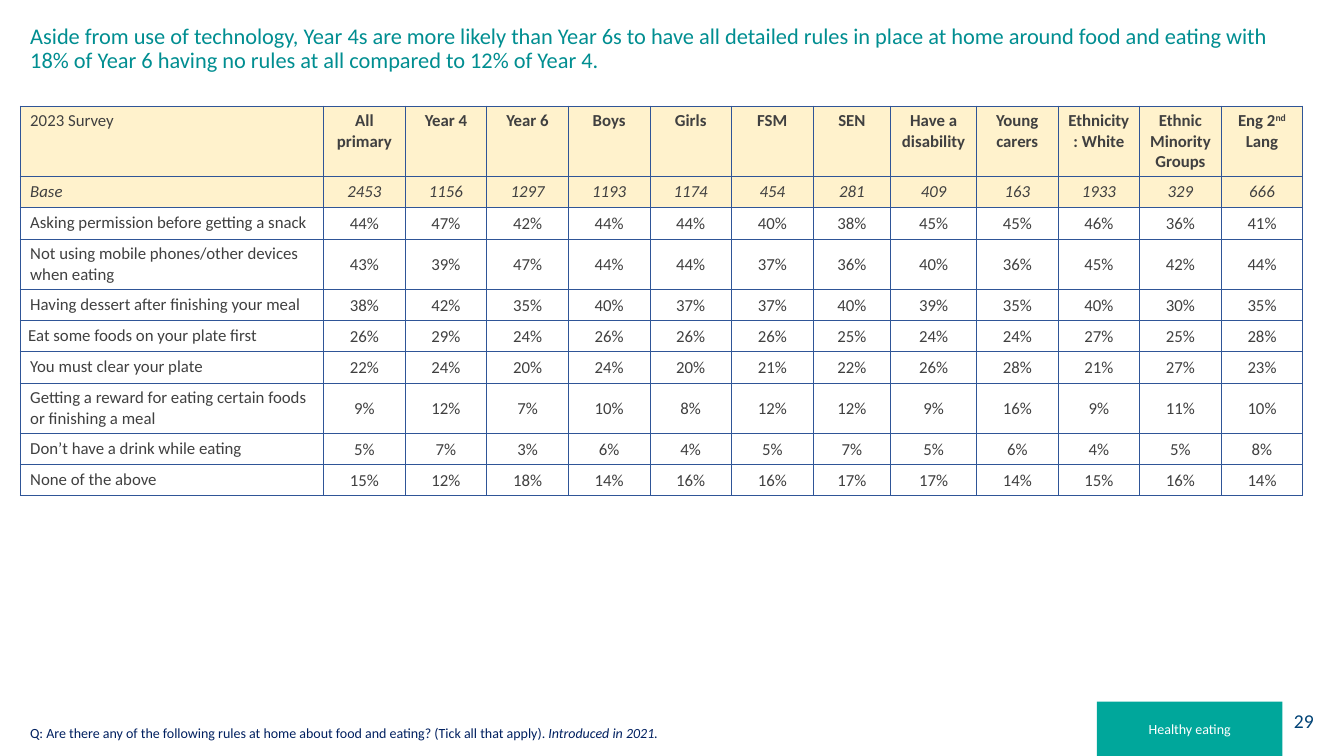
from dataclasses import dataclass

from lxml.etree import SubElement
from pptx import Presentation
from pptx.dml.color import RGBColor
from pptx.enum.shapes import MSO_SHAPE
from pptx.enum.text import MSO_ANCHOR, MSO_AUTO_SIZE, PP_ALIGN
from pptx.oxml.ns import qn
from pptx.util import Inches, Pt


@dataclass(frozen=True)
class Theme:
    font: str = "Calibri"
    heading: str = "008E91"
    body: str = "404040"
    question: str = "002060"
    number: str = "004376"
    border: str = "2F5597"
    header_fill: str = "FFF2CC"
    tag_fill: str = "00A79B"
    white: str = "FFFFFF"
    heading_size: int = 16
    number_size: int = 14
    table_size: int = 12
    small_size: int = 10
    border_width: float = 0.5


THEME = Theme()
WIDTH, HEIGHT = Inches(13.33), Inches(7.5)

TITLE = ("Aside from use of technology, Year 4s are more likely than Year 6s to have all "
         "detailed rules in place at home around food and eating with 18% of Year 6 having "
         "no rules at all compared to 12% of Year 4.")
QUESTION = ("Q: Are there any of the following rules at home about food and eating? "
            "(Tick all that apply). ")
GROUPS = ["All primary", "Year 4", "Year 6", "Boys", "Girls", "FSM", "SEN",
          "Have a disability", "Young carers", "Ethnicity: White",
          "Ethnic Minority Groups", "Eng 2^nd^ Lang"]
BASES = [2453, 1156, 1297, 1193, 1174, 454, 281, 409, 163, 1933, 329, 666]
INDENTED_RULE = "Eat some foods on your plate first"
RULES = {
    "Asking permission before getting a snack":
        [44, 47, 42, 44, 44, 40, 38, 45, 45, 46, 36, 41],
    "Not using mobile phones/other devices when eating":
        [43, 39, 47, 44, 44, 37, 36, 40, 36, 45, 42, 44],
    "Having dessert after finishing your meal":
        [38, 42, 35, 40, 37, 37, 40, 39, 35, 40, 30, 35],
    INDENTED_RULE:
        [26, 29, 24, 26, 26, 26, 25, 24, 24, 27, 25, 28],
    "You must clear your plate":
        [22, 24, 20, 24, 20, 21, 22, 26, 28, 21, 27, 23],
    "Getting a reward for eating certain foods or finishing a meal":
        [9, 12, 7, 10, 8, 12, 12, 9, 16, 9, 11, 10],
    "Don’t have a drink while eating":
        [5, 7, 3, 6, 4, 5, 7, 5, 6, 4, 5, 8],
    "None of the above":
        [15, 12, 18, 14, 16, 16, 17, 17, 14, 15, 16, 14],
}
# Percent of the slide's width and height
COLUMN_SHARES = [22.58] + [6.07] * 6 + [5.78, 6.38] + [6.07] * 4
HEADER_SHARE, ROW_SHARE = 6.4, 4.13


def across(percent):
    return round(WIDTH * percent / 100)


def down(percent):
    return round(HEIGHT * percent / 100)


def area(left, top, width, height):
    """Turn percentages of the slide into a position and size."""
    return across(left), down(top), across(width), down(height)


def add_span(para, text, size, color, bold=False, italic=False):
    span = para.add_run()
    span.text = text
    font = span.font
    font.name, font.size = THEME.font, Pt(size)
    font.bold, font.italic = bold, italic
    font.color.rgb = RGBColor.from_string(color)
    return span


def set_title(page):
    title = page.shapes.title
    title.left, title.top, title.width, title.height = area(1.5, 2.67, 95.42, 13.07)
    frame = title.text_frame
    frame.word_wrap = True
    frame.auto_size = MSO_AUTO_SIZE.NONE
    frame.vertical_anchor = MSO_ANCHOR.TOP
    para = frame.paragraphs[0]
    para.alignment = PP_ALIGN.LEFT
    para.line_spacing = 0.9
    add_span(para, TITLE, THEME.heading_size, THEME.heading)


def add_panel(page, place, fill, text, size, color, alignment):
    panel = page.shapes.add_shape(MSO_SHAPE.RECTANGLE, *place)
    panel.shadow.inherit = False
    panel.fill.solid()
    panel.fill.fore_color.rgb = RGBColor.from_string(fill)
    panel.line.fill.background()
    panel.text_frame.vertical_anchor = MSO_ANCHOR.MIDDLE
    para = panel.text_frame.paragraphs[0]
    para.alignment = alignment
    add_span(para, text, size, color)


def add_question(page):
    box = page.shapes.add_textbox(*area(1.5, 95.07, 49.96, 3.6))
    frame = box.text_frame
    frame.word_wrap = True
    frame.vertical_anchor = MSO_ANCHOR.BOTTOM
    para = frame.paragraphs[0]
    add_span(para, QUESTION, THEME.small_size, THEME.question)
    add_span(para, "Introduced in 2021.", THEME.small_size, THEME.question, italic=True)


def set_borders(cell):
    properties = cell._tc.get_or_add_tcPr()
    for index, side in enumerate(("a:lnL", "a:lnR", "a:lnT", "a:lnB")):
        line = SubElement(properties, qn(side), w=str(Pt(THEME.border_width)))
        SubElement(SubElement(line, qn("a:solidFill")), qn("a:srgbClr"), val=THEME.border)
        properties.insert(index, line)


def fill_cell(cell, text, row, column):
    """Write and style one cell; text between carets is superscript."""
    is_header, is_base = row == 0, row == 1
    cell.fill.solid()
    cell.fill.fore_color.rgb = RGBColor.from_string(
        THEME.header_fill if is_header or is_base else THEME.white)
    set_borders(cell)
    cell.vertical_anchor = MSO_ANCHOR.TOP if is_header else MSO_ANCHOR.MIDDLE
    if row > 1 and column > 0:
        cell.margin_left = cell.margin_top = cell.margin_right = Inches(0.01)
        cell.margin_bottom = 0
    elif text == INDENTED_RULE:
        cell.margin_left = Inches(0.08)
    para = cell.text_frame.paragraphs[0]
    para.alignment = PP_ALIGN.CENTER if column else PP_ALIGN.LEFT
    for index, part in enumerate(text.split("^")):
        span = add_span(para, part, THEME.table_size, THEME.body,
                        bold=is_header and column > 0, italic=is_base)
        if index % 2:
            span._r.get_or_add_rPr().set("baseline", "30000")


def add_survey_table(page):
    lines = [["2023 Survey", *GROUPS], ["Base", *map(str, BASES)]]
    lines += [[rule, *(f"{value}%" for value in values)] for rule, values in RULES.items()]
    row_shares = [HEADER_SHARE] + [ROW_SHARE] * (len(lines) - 1)
    place = area(1.5, 14, sum(COLUMN_SHARES), sum(row_shares))
    table = page.shapes.add_table(len(lines), len(COLUMN_SHARES), *place).table
    table.first_row = table.horz_banding = False
    for column, share in zip(table.columns, COLUMN_SHARES):
        column.width = across(share)
    for row, share in zip(table.rows, row_shares):
        row.height = down(share)
    for row, line in enumerate(lines):
        for column, text in enumerate(line):
            fill_cell(table.cell(row, column), text, row, column)


def main():
    deck = Presentation()
    deck.slide_width, deck.slide_height = WIDTH, HEIGHT
    page = deck.slides.add_slide(deck.slide_layouts[5])
    add_panel(page, area(94.07, 92.67, 4.43, 5.33), THEME.white, "29",
              THEME.number_size, THEME.number, PP_ALIGN.RIGHT)
    set_title(page)
    add_question(page)
    add_survey_table(page)
    add_panel(page, area(81.62, 92.8, 13.8, 7.2), THEME.tag_fill, "Healthy eating",
              THEME.small_size, THEME.white, PP_ALIGN.CENTER)
    deck.save("out.pptx")


if __name__ == "__main__":
    main()
